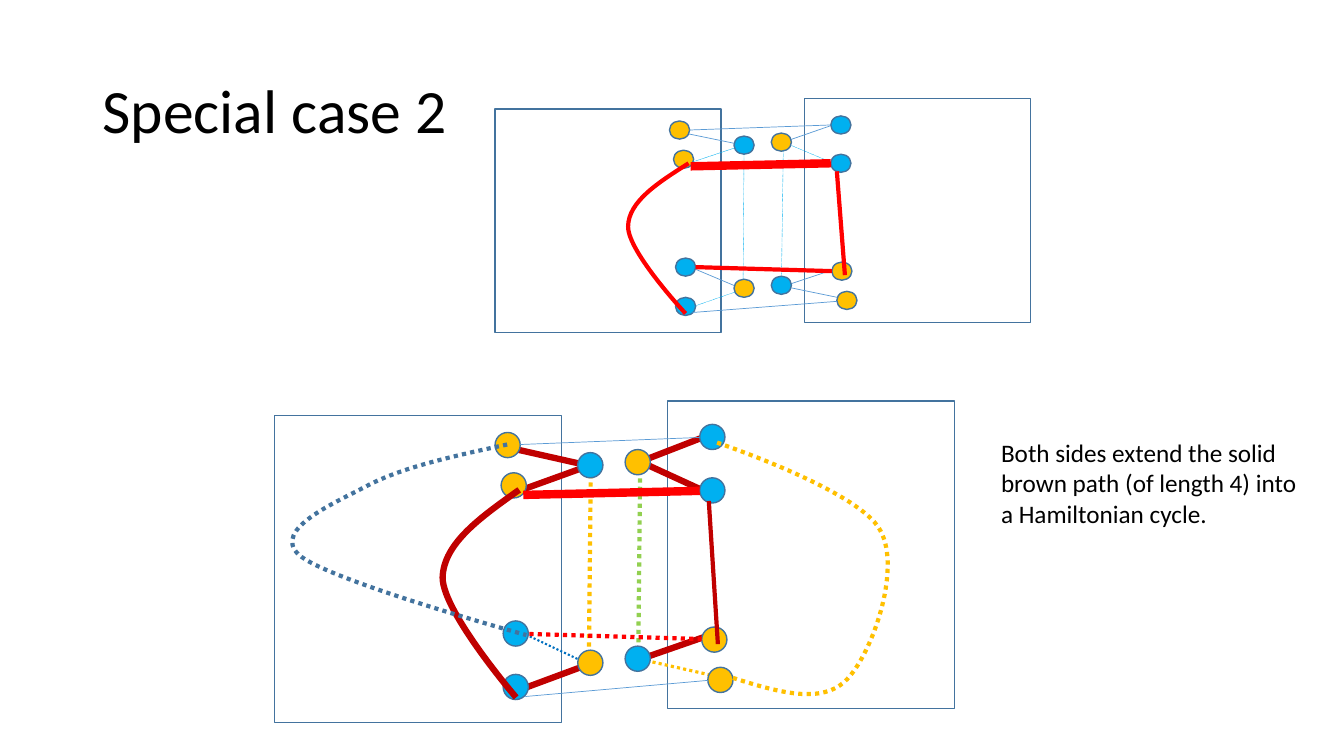
from pptx import Presentation
from pptx.dml.color import RGBColor as RGB
from pptx.enum.dml import MSO_LINE as Dash
from pptx.enum.shapes import MSO_CONNECTOR as Link, MSO_SHAPE as Form
from pptx.enum.text import MSO_ANCHOR as Anchor
from pptx.oxml.ns import qn
from pptx.util import Inches, Pt
from lxml import etree

HUES = {
    "black": "000000", "edge": "43739E", "pale": "5B9BD5", "sky": "00B0F0",
    "blue": "0070C0", "gold": "FFC000", "brown": "C00000", "red": "FF0000",
    "green": "92D050",
}
DOT, SHORT = Dash.ROUND_DOT, Dash.SQUARE_DOT
# Each half lists its nodes in this order: two hubs, then four outer nodes
NODES = ["sky", "gold", "sky", "sky", "gold", "gold"]


class Board:
    def __init__(self, slide, font="Calibri"):
        self.slide = slide
        self.shapes = slide.shapes
        self.font = font

    def hue(self, name):
        return RGB.from_string(HUES[name])

    def pen(self, line, hue, width, dash=None):
        line.color.rgb = self.hue(hue)
        line.width = Pt(width)
        if dash is not None:
            line.dash_style = dash

    def text(self, box, words, size, anchor=Anchor.TOP, space=None):
        frame = self.shapes.add_textbox(*map(Inches, box)).text_frame
        frame.word_wrap = True
        frame.vertical_anchor = anchor
        para = frame.paragraphs[0]
        para.text = words
        para.line_spacing = space
        para.font.name = self.font
        para.font.size = Pt(size)
        para.font.color.rgb = self.hue("black")

    def shape(self, form, box, fill=None):
        item = self.shapes.add_shape(form, *map(Inches, box))
        item.shadow.inherit = False
        if fill:
            item.fill.solid()
            item.fill.fore_color.rgb = self.hue(fill)
        else:
            item.fill.background()
        self.pen(item.line, "edge", 1)

    def line(self, start, end, *style):
        ends = map(Inches, (*start, *end))
        item = self.shapes.add_connector(Link.STRAIGHT, *ends)
        self.pen(item.line, *style)
        etree.SubElement(item.element.spPr, qn("a:effectLst"))

    def curve(self, points, *style):
        """Draw one straight segment, or cubic arcs of three points each."""
        spots = [(Inches(x), Inches(y)) for x, y in points]
        build = self.shapes.build_freeform(*spots[0])
        build.add_line_segments(spots[1:], close=False)
        item = build.convert_to_shape()
        item.shadow.inherit = False
        item.fill.background()
        self.pen(item.line, *style)
        steps = list(item.element.iter(qn("a:lnTo")))
        if len(steps) % 3 == 0:
            for i in range(0, len(steps), 3):
                arc = etree.Element(qn("a:cubicBezTo"))
                steps[i].addprevious(arc)
                for step in steps[i:i + 3]:
                    arc.append(step[0])
                    step.getparent().remove(step)

    def half(self, frame, size, spots, edges):
        self.shape(Form.RECTANGLE, frame)
        for edge in edges:
            self.line(*edge)
        for spot, fill in zip(spots, NODES):
            self.shape(Form.OVAL, (*spot, *size), fill)


def main():
    deck = Presentation()
    deck.slide_width, deck.slide_height = Inches(13.33), Inches(7.5)
    board = Board(deck.slides.add_slide(deck.slide_layouts[6]))
    thick, thin = ("brown", 4.5), ("pale", 0.5)
    faint = ("sky", 0.25, DOT)

    board.text((0.92, 0.4, 11.5, 1.45), "Special case 2", 44, Anchor.MIDDLE, 0.9)

    # Lower graph, left half
    size = (0.25, 0.25)
    top, low = (5.84, 4.62), (5.84, 6.59)
    board.half(
        (2.72, 4.12, 2.85, 3.05), size,
        [(5.73, 4.49), (5.73, 6.45), (4.99, 6.69),
         (4.99, 6.16), (4.97, 4.69), (4.91, 4.29)],
        [((5.86, 4.62), low, "gold", 3, DOT),
         (top, (5.04, 4.44), *thick),
         (top, (5.12, 4.88), *thick),
         (low, (5.12, 6.25), "blue", 1.5, DOT),
         (low, (5.22, 6.82), *thick)])

    # Lower graph, right half
    top, low = (6.35, 4.58), (6.35, 6.54)
    board.half(
        (6.62, 3.98, 2.85, 3.05), size,
        [(6.2, 6.41), (6.2, 4.46), (6.94, 4.21),
         (6.94, 4.74), (6.96, 6.22), (7.02, 6.62)],
        [((6.33, 6.54), top, "green", 3, DOT),
         (low, (7.15, 6.72), "gold", 2.25, DOT),
         (low, (7.07, 6.29), *thick),
         (top, (7.07, 4.91), *thick),
         (top, (6.97, 4.34), *thick)])

    # Lower graph, links between halves and paths within them
    board.line((5.16, 4.41), (6.94, 4.34), *thin)
    board.line((5.19, 4.91), (6.94, 4.87), "red", 6)
    board.line((5.25, 6.29), (6.96, 6.34), "red", 3, DOT)
    board.line((5.21, 6.91), (7.02, 6.75), *thin)
    board.curve([(7.03, 4.97), (7.12, 6.39)], "brown", 3)
    board.curve([(5.15, 4.86), (4.77, 5.13), (4.4, 5.39), (4.39, 5.73),
                 (4.39, 6.07), (5.12, 6.92), (5.12, 6.92)], *thick)
    board.curve([(7.19, 6.7), (7.66, 6.85), (8.12, 7), (8.38, 6.76),
                 (8.64, 6.52), (8.95, 5.65), (8.73, 5.26),
                 (8.52, 4.86), (7.08, 4.38), (7.08, 4.38)], "gold", 3, DOT)
    board.curve([(5.03, 4.41), (4.52, 4.52), (4.01, 4.63), (3.66, 4.81),
                 (3.32, 4.99), (2.7, 5.25), (2.96, 5.5),
                 (3.22, 5.75), (5.22, 6.3), (5.22, 6.3)], "edge", 3, DOT)

    # Upper graph, left half
    size = (0.2, 0.18)
    top, low = (7.37, 1.44), (7.37, 2.87)
    board.half(
        (4.91, 1.08, 2.24, 2.22), size,
        [(7.28, 1.35), (7.28, 2.77), (6.7, 2.95),
         (6.7, 2.56), (6.68, 1.49), (6.64, 1.2)],
        [((7.38, 1.44), low, *faint),
         (top, (6.74, 1.31), *thin),
         (top, (6.8, 1.63), "sky", 0.25, SHORT),
         (low, (6.8, 2.63), *thin),
         (low, (6.88, 3.04), *faint)])

    # Upper graph, right half
    top, low = (7.77, 1.41), (7.77, 2.84)
    board.half(
        (7.98, 0.98, 2.24, 2.22), size,
        [(7.65, 2.74), (7.65, 1.32), (8.24, 1.15),
         (8.24, 1.53), (8.25, 2.6), (8.3, 2.89)],
        [((7.75, 2.84), top, *faint),
         (low, (8.4, 2.97), *thin),
         (low, (8.34, 2.65), *thin),
         (top, (8.34, 1.65), *faint),
         (top, (8.26, 1.24), *thin)])

    # Upper graph, links between halves and paths within them
    board.line((6.84, 1.29), (8.24, 1.24), *thin)
    board.line((6.85, 1.65), (8.24, 1.62), "red", 6)
    board.line((6.9, 2.65), (8.25, 2.69), "red", 3)
    board.line((6.87, 3.1), (8.3, 2.99), *thin)
    board.curve([(8.3, 1.7), (8.38, 2.73)], "red", 3)
    board.curve([(6.83, 1.62), (6.53, 1.81), (6.23, 2), (6.23, 2.25),
                 (6.23, 2.5), (6.8, 3.11), (6.8, 3.11)], "red", 3)

    # Remark
    board.text((9.83, 4.29, 3.29, 1.01),
               "Both sides extend the solid brown path (of length 4) "
               "into a Hamiltonian cycle.", 18)
    deck.save("out.pptx")


if __name__ == "__main__":
    main()
